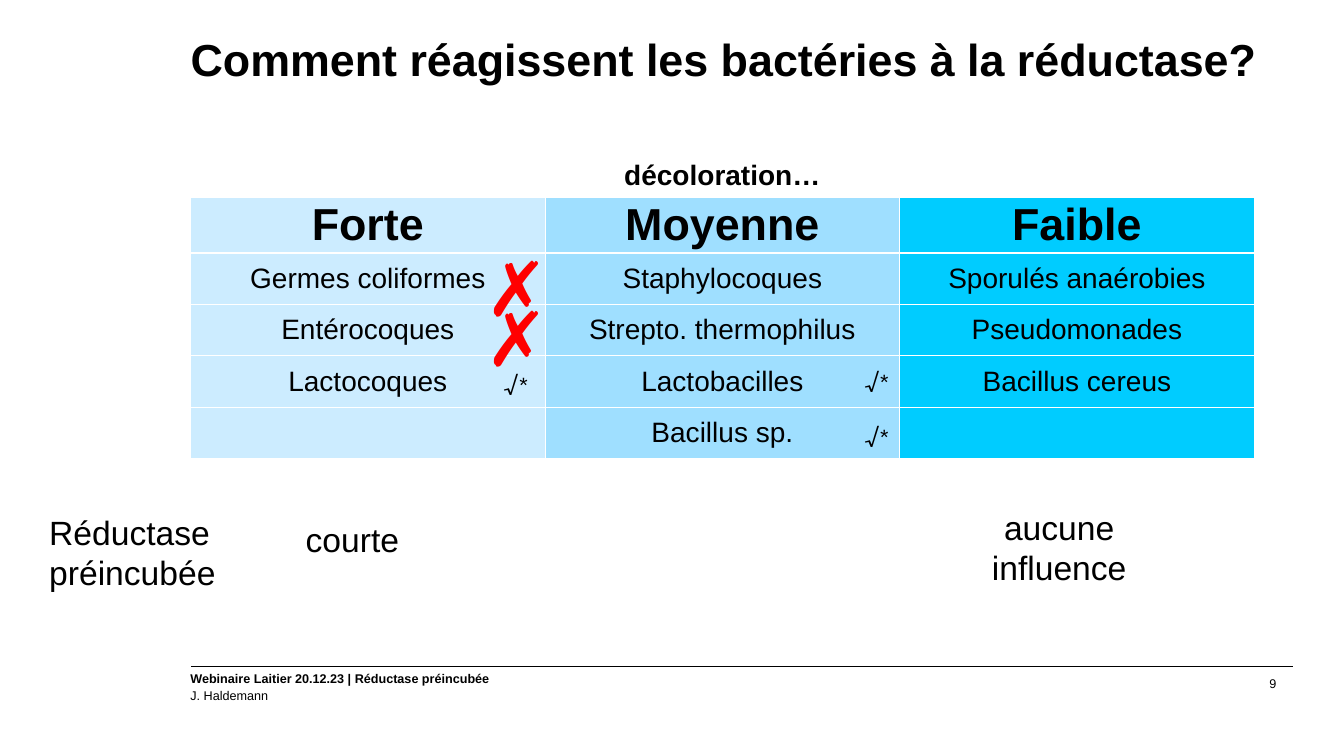
from pptx import Presentation
from pptx.dml.color import RGBColor
from pptx.enum import shapes, text
from pptx.oxml import parse_xml
from pptx.oxml.ns import nsdecls
from pptx.util import Inches, Pt

BLACK, WHITE, RED = "000000", "FFFFFF", "FF0000"
LEFT, CENTER, RIGHT = (text.PP_ALIGN.LEFT, text.PP_ALIGN.CENTER,
                       text.PP_ALIGN.RIGHT)
TONES = ["CCECFF", "9FDFFF", "00CCFF"]
ROWS = [
    ["Forte", "Moyenne", "Faible"],
    ["Germes coliformes", "Staphylocoques", "Sporulés anaérobies"],
    ["Entérocoques", "Strepto. thermophilus", "Pseudomonades"],
    ["Lactocoques", "Lactobacilles", "Bacillus cereus"],
    ["", "Bacillus sp.", ""],
]
HEIGHTS = [0.42, 0.56] + [0.51] * 4


def color(code):
    return RGBColor.from_string(code)


def write(frame, words, size=20, bold=False, tint=BLACK, face="Arial",
          align=LEFT, lead=None):
    par = frame.paragraphs[0]
    par.alignment = align
    if lead:
        par.line_spacing = lead
    run = par.add_run()
    run.text = words
    font = run.font
    font.size, font.bold, font.name = Pt(size), bold, face
    font.color.rgb = color(tint)


def label(slide, box, words, inset=True, **style):
    frame = slide.shapes.add_textbox(*map(Inches, box)).text_frame
    frame.word_wrap = True
    if not inset:
        frame.margin_left = frame.margin_right = 0
        frame.margin_top = frame.margin_bottom = 0
    write(frame, words, **style)


def heading(slide, box):
    title = slide.shapes.title
    title.left, title.top, title.width, title.height = map(Inches, box)
    frame = title.text_frame
    frame.margin_left = frame.margin_right = 0
    frame.margin_top = frame.margin_bottom = 0
    frame.vertical_anchor = text.MSO_ANCHOR.TOP
    frame.word_wrap = True
    frame.auto_size = text.MSO_AUTO_SIZE.NONE
    write(frame, "Comment réagissent les bactéries à la réductase?",
          size=32, bold=True, lead=Pt(35))


def paint(cell, fill, base=1):
    cell.fill.solid()
    cell.fill.fore_color.rgb = color(fill)
    cell.vertical_anchor = text.MSO_ANCHOR.MIDDLE
    cell.margin_left = cell.margin_right = Inches(0.07)
    cell.margin_top = cell.margin_bottom = 0
    # Borders go before the fill in the cell properties
    props = cell._tc.get_or_add_tcPr()
    for spot, side in enumerate("LRTB"):
        width = Pt(base if side == "B" else 1)
        props.insert(spot, parse_xml(
            f'<a:ln{side} {nsdecls("a")} w="{width}"><a:solidFill>'
            f'<a:srgbClr val="{WHITE}"/></a:solidFill></a:ln{side}>'))


def germs(slide, box):
    table = slide.shapes.add_table(len(HEIGHTS), len(TONES),
                                   *map(Inches, box)).table
    table.horz_banding = False
    for row, high in zip(table.rows, HEIGHTS):
        row.height = Inches(high)
    for col in table.columns:
        col.width = Inches(box[2] / len(TONES))
    # Spanning caption
    for num in range(len(TONES)):
        paint(table.cell(0, num), WHITE, base=3)
    top = table.cell(0, 0)
    top.merge(table.cell(0, len(TONES) - 1))
    write(top.text_frame, "décoloration…", bold=True, align=CENTER)
    # Headings and germs
    for r, names in enumerate(ROWS, 1):
        for c, name in enumerate(names):
            cell = table.cell(r, c)
            paint(cell, TONES[c])
            if name:
                write(cell.text_frame, name, size=32 if r == 1 else 20,
                      bold=r == 1, align=CENTER)


def marks(slide, box):
    x, y = box[:2]
    for dy in (0.81, 1.31):
        label(slide, (x + 2.83, y + dy, 0.72, 1.01), "✗",
              size=54, bold=True, tint=RED)
    for dx, dy in ((3.01, 2.09), (6.59, 2.06), (6.59, 2.61)):
        label(slide, (x + dx, y + dy, 0.54, 0.4), "√*", size=18, face="Karla")


def effects(slide, box):
    x, y, wide, high = box
    for dx, dy, words, align in ((0, 0.05, "Réductase préincubée", LEFT),
                                 (2.12, 0.12, "courte", CENTER),
                                 (9.13, 0, "aucune influence", CENTER)):
        label(slide, (x + dx, y + dy, wide, high), words, size=24, align=align)


def footer(slide, box):
    x, y, wide, _ = box
    rule = slide.shapes.add_connector(
        shapes.MSO_CONNECTOR.STRAIGHT,
        *map(Inches, (x + wide, y, x, y)))
    rule.line.color.rgb = color(BLACK)
    rule.line.width = Pt(0.75)
    rule._element.spPr.append(parse_xml(f'<a:effectLst {nsdecls("a")}/>'))
    label(slide, (x - 0.1, y, 5.27, 0.25),
          "Webinaire Laitier 20.12.23 | Réductase préincubée",
          size=9, bold=True)
    label(slide, (x - 0.1, y + 0.16, 2.79, 0.25), "J. Haldemann", size=9)
    label(slide, (x + 7.5, y + 0.09, 3.27, 0.16), "9", inset=False,
          size=9, align=RIGHT, lead=1.05)


def main():
    deck = Presentation()
    deck.slide_width, deck.slide_height = Inches(13.33), Inches(7.5)
    slide = deck.slides.add_slide(deck.slide_layouts[5])
    grid = (1.89, 1.53, 10.55, 3.02)
    footer(slide, (1.89, 6.61, 10.93, 0.41))
    heading(slide, (1.89, 0.36, 10.88, 1.08))
    germs(slide, grid)
    marks(slide, grid)
    effects(slide, (0.39, 4.98, 1.97, 0.91))
    deck.save("out.pptx")


if __name__ == "__main__":
    main()
